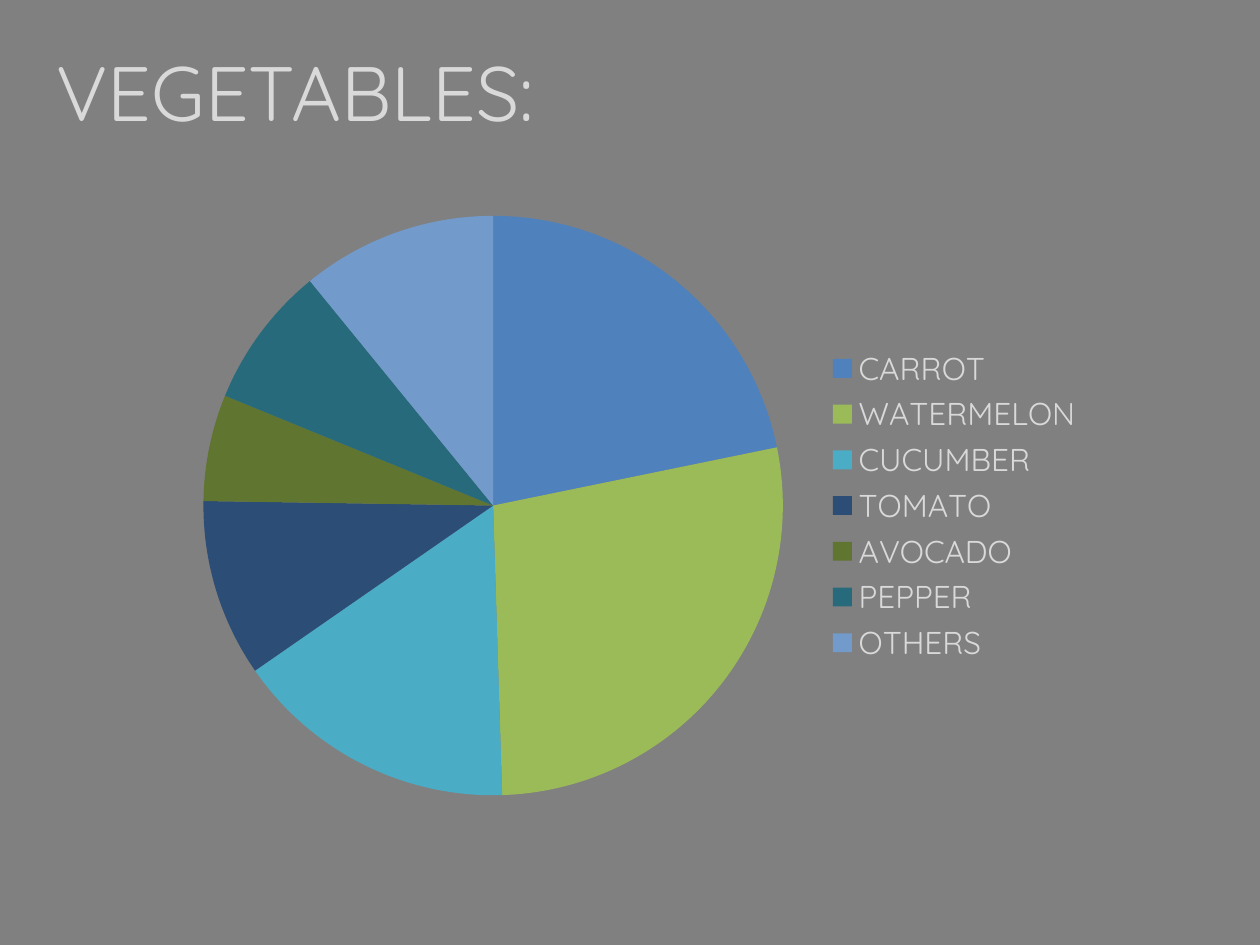
from dataclasses import dataclass

from pptx import Presentation
from pptx.chart.data import CategoryChartData
from pptx.dml.color import RGBColor
from pptx.enum.chart import XL_CHART_TYPE, XL_LEGEND_POSITION
from pptx.enum.shapes import MSO_SHAPE
from pptx.enum.text import MSO_ANCHOR, PP_ALIGN
from pptx.util import Inches, Pt

PIE = XL_CHART_TYPE.PIE
LEGEND_RIGHT = XL_LEGEND_POSITION.RIGHT
RECTANGLE = MSO_SHAPE.RECTANGLE
TOP = MSO_ANCHOR.TOP
LEFT = PP_ALIGN.LEFT
TITLE_ONLY = 5
WIDTH, HEIGHT = 10, 7.5


@dataclass(frozen=True)
class Theme:
    backdrop: str = "808080"
    text: str = "D9D9D9"
    font: str = "Quicksand"
    title_size: int = 44
    legend_size: int = 18


THEME = Theme()

# Category: (value, slice colour)
VEGETABLES = {
    "CARROT": (22, "4F81BD"),
    "WATERMELON": (28, "9BBB59"),
    "CUCUMBER": (16, "4BACC6"),
    "TOMATO": (10, "2C4D75"),
    "AVOCADO": (6, "5F7530"),
    "PEPPER": (8, "276A7C"),
    "OTHERS": (11, "729ACA"),
}


def share(left, top, width, height):
    """Turn shares of the slide's size into a box of lengths."""
    return (Inches(left * WIDTH), Inches(top * HEIGHT),
            Inches(width * WIDTH), Inches(height * HEIGHT))


def format_font(font, size, color=THEME.text, name=THEME.font):
    font.name = name
    font.size = Pt(size)
    font.color.rgb = RGBColor.from_string(color)


def write_text(tf, text, size, align=LEFT, anchor=TOP, wrap=False):
    tf.word_wrap = wrap
    tf.vertical_anchor = anchor
    p = tf.paragraphs[0]
    p.alignment = align
    r = p.add_run()
    r.text = text
    format_font(r.font, size)


def add_backdrop(s, box):
    sp = s.shapes.add_shape(RECTANGLE, *box)
    sp.shadow.inherit = False
    color = RGBColor.from_string(THEME.backdrop)
    sp.fill.solid()
    sp.fill.fore_color.rgb = color
    sp.line.color.rgb = color
    sp.line.width = Pt(2)
    # The title placeholder comes with the layout, so go behind it.
    s.shapes.title.element.addprevious(sp.element)


def place_title(s, box, text):
    title = s.shapes.title
    title.left, title.top, title.width, title.height = box
    write_text(title.text_frame, text, THEME.title_size)


def add_pie(s, box, slices):
    data = CategoryChartData()
    data.categories = list(slices)
    data.add_series("Series 1", [value for value, _ in slices.values()])
    chart = s.shapes.add_chart(PIE, *box, data).chart
    chart.has_title = False
    format_font(chart.font, 10, color="000000", name="Calibri")

    chart.has_legend = True
    chart.legend.position = LEGEND_RIGHT
    chart.legend.include_in_layout = False
    format_font(chart.legend.font, THEME.legend_size)

    plot = chart.plots[0]
    plot.vary_by_categories = True
    for i, (_, color) in enumerate(slices.values()):
        fill = plot.series[0].points[i].format.fill
        fill.solid()
        fill.fore_color.rgb = RGBColor.from_string(color)


def main():
    prs = Presentation()
    prs.slide_width, prs.slide_height = Inches(WIDTH), Inches(HEIGHT)
    s = prs.slides.add_slide(prs.slide_layouts[TITLE_ONLY])
    add_backdrop(s, share(0, 0, 1, 1))
    place_title(s, share(0.035, 0.04, 0.465, 0.11), "VEGETABLES:")
    add_pie(s, share(0.13, 0.21, 0.74, 0.65), VEGETABLES)
    prs.save("out.pptx")


if __name__ == "__main__":
    main()
